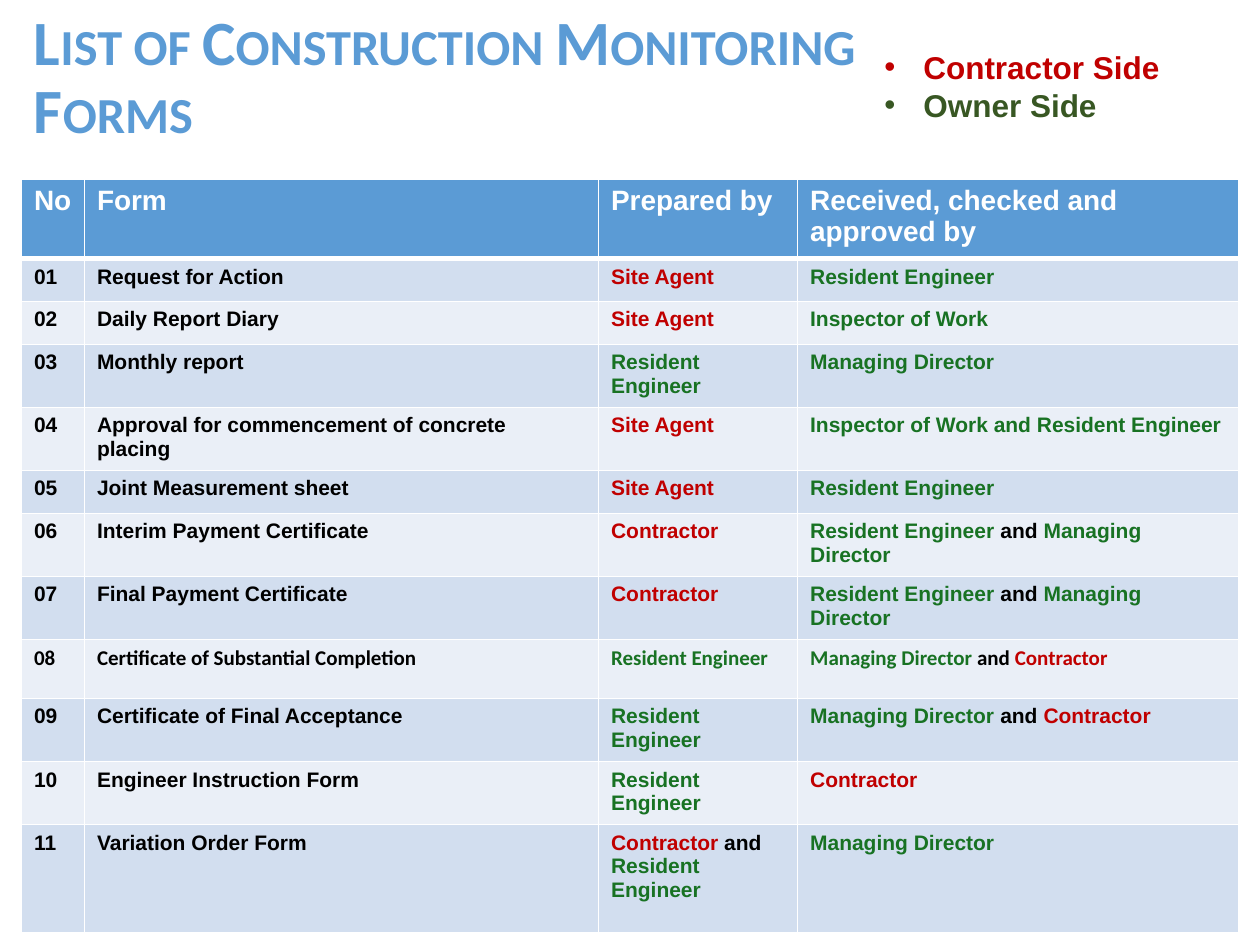
from lxml.etree import SubElement
from pptx import Presentation
from pptx.dml.color import RGBColor
from pptx.enum.text import MSO_ANCHOR as Anchor
from pptx.oxml.ns import qn
from pptx.util import Inches, Pt

BLUE, WHITE, BLACK = "5B9BD5", "FFFFFF", "000000"
RED, GREEN, DARK_GREEN = "C00000", "187223", "385723"
BANDS = ("D2DEEF", "EAEFF7")

HEADINGS = ("No", "Form", "Prepared by", "Received, checked and approved by")
COLUMN_WIDTHS = (0.5, 4.08, 1.58, 3.5)
ROW_HEIGHTS = (0.47, 0.34, 0.34, 0.34, 0.47, 0.34, 0.47, 0.47, 0.47, 0.47, 0.34, 0.86)

AGENT, CONTRACTOR = "Site Agent", "Contractor"
ENGINEER, DIRECTOR, INSPECTOR = "Resident Engineer", "Managing Director", "Inspector of Work"
CONTRACTOR_SIDE = (AGENT, CONTRACTOR)

# Form, parties preparing it, parties approving it
FORMS = (
    ("Request for Action", (AGENT,), (ENGINEER,)),
    ("Daily Report Diary", (AGENT,), (INSPECTOR,)),
    ("Monthly report", (ENGINEER,), (DIRECTOR,)),
    ("Approval for commencement of concrete placing", (AGENT,),
     (f"{INSPECTOR} and {ENGINEER}",)),
    ("Joint Measurement sheet", (AGENT,), (ENGINEER,)),
    ("Interim Payment Certificate", (CONTRACTOR,), (ENGINEER, DIRECTOR)),
    ("Final Payment Certificate", (CONTRACTOR,), (ENGINEER, DIRECTOR)),
    ("Certificate of Substantial Completion", (ENGINEER,), (DIRECTOR, CONTRACTOR)),
    ("Certificate of Final Acceptance", (ENGINEER,), (DIRECTOR, CONTRACTOR)),
    ("Engineer Instruction Form", (ENGINEER,), (CONTRACTOR,)),
    ("Variation Order Form", (CONTRACTOR, ENGINEER), (DIRECTOR,)),
)
CALIBRI_FORM = "Certificate of Substantial Completion"


def rgb(value):
    return RGBColor.from_string(value)


def party_runs(parties):
    """Colour each party by its side and join them with a black "and"."""
    runs = []
    for party in parties:
        if runs:
            runs.append((" and ", BLACK))
        runs.append((party, RED if party in CONTRACTOR_SIDE else GREEN))
    return runs


class SlideBuilder:
    body_font = "Arial"
    title_font = "Calibri"

    def __init__(self, slide):
        self.slide = slide

    def span(self, para, text, size, color, font=None):
        run = para.add_run()
        run.text = text
        run.font.name = font or self.body_font
        run.font.size = Pt(size)
        run.font.bold = True
        run.font.color.rgb = rgb(color)

    def text_frame(self, left, top, width, height):
        box = self.slide.shapes.add_textbox(
            Inches(left), Inches(top), Inches(width), Inches(height))
        box.text_frame.word_wrap = True
        return box.text_frame

    def title(self, text, left, top, width, height):
        """Set a title in small capitals: large initials, smaller remainders."""
        frame = self.text_frame(left, top, width, height)
        frame.vertical_anchor = Anchor.MIDDLE
        para = frame.paragraphs[0]
        para.line_spacing = 0.9
        small = ""
        for letter in text:
            if letter.isupper():
                if small:
                    self.span(para, small.upper(), 28.8, BLUE, self.title_font)
                self.span(para, letter, 36, BLUE, self.title_font)
                small = ""
            else:
                small += letter
        self.span(para, small.upper(), 28.8, BLUE, self.title_font)

    def bullets(self, items, left, top, width, height):
        frame = self.text_frame(left, top, width, height)
        for index, (text, color) in enumerate(items):
            para = frame.add_paragraph() if index else frame.paragraphs[0]
            props = para._p.get_or_add_pPr()
            props.set("marL", str(Inches(0.31)))
            props.set("indent", str(Inches(-0.31)))
            SubElement(props, qn("a:buFont"), typeface=self.body_font)
            SubElement(props, qn("a:buChar"), char="•")
            self.span(para, text, 18, color)

    def border(self, cell, side, width):
        line = SubElement(cell._tc.get_or_add_tcPr(), qn(f"a:ln{side}"), w=str(Pt(width)))
        SubElement(SubElement(line, qn("a:solidFill")), qn("a:srgbClr"), val=WHITE)

    def cell(self, cell, runs, fill, size, font=None, top=1, bottom=1):
        for side, width in (("L", 1), ("R", 1), ("T", top), ("B", bottom)):
            self.border(cell, side, width)
        cell.fill.solid()
        cell.fill.fore_color.rgb = rgb(fill)
        for text, color in runs:
            self.span(cell.text_frame.paragraphs[0], text, size, color, font)

    def form_table(self, left, top):
        table = self.slide.shapes.add_table(
            len(ROW_HEIGHTS), len(COLUMN_WIDTHS), Inches(left), Inches(top),
            Inches(sum(COLUMN_WIDTHS)), Inches(sum(ROW_HEIGHTS))).table
        for column, width in zip(table.columns, COLUMN_WIDTHS):
            column.width = Inches(width)
        for row, height in zip(table.rows, ROW_HEIGHTS):
            row.height = Inches(height)
        for column, heading in enumerate(HEADINGS):
            self.cell(table.cell(0, column), [(heading, WHITE)], BLUE, 16, bottom=3)
        for number, (form, preparers, approvers) in enumerate(FORMS, 1):
            font = self.title_font if form == CALIBRI_FORM else None
            contents = ([(f"{number:02}", BLACK)], [(form, BLACK)],
                        party_runs(preparers), party_runs(approvers))
            for column, runs in enumerate(contents):
                self.cell(table.cell(number, column), runs, BANDS[(number - 1) % 2], 12,
                          font, top=3 if number == 1 else 1)


def main():
    deck = Presentation()
    deck.slide_width, deck.slide_height = Inches(10), Inches(7.5)
    page = SlideBuilder(deck.slides.add_slide(deck.slide_layouts[6]))
    page.title("List of Construction Monitoring Forms", 0.17, 0, 7.92, 1.25)
    page.form_table(0.17, 1.42)
    page.bullets([("Contractor Side", RED), ("Owner Side", DARK_GREEN)], 6.92, 0.33, 2.75, 0.71)
    deck.save("out.pptx")


if __name__ == "__main__":
    main()
